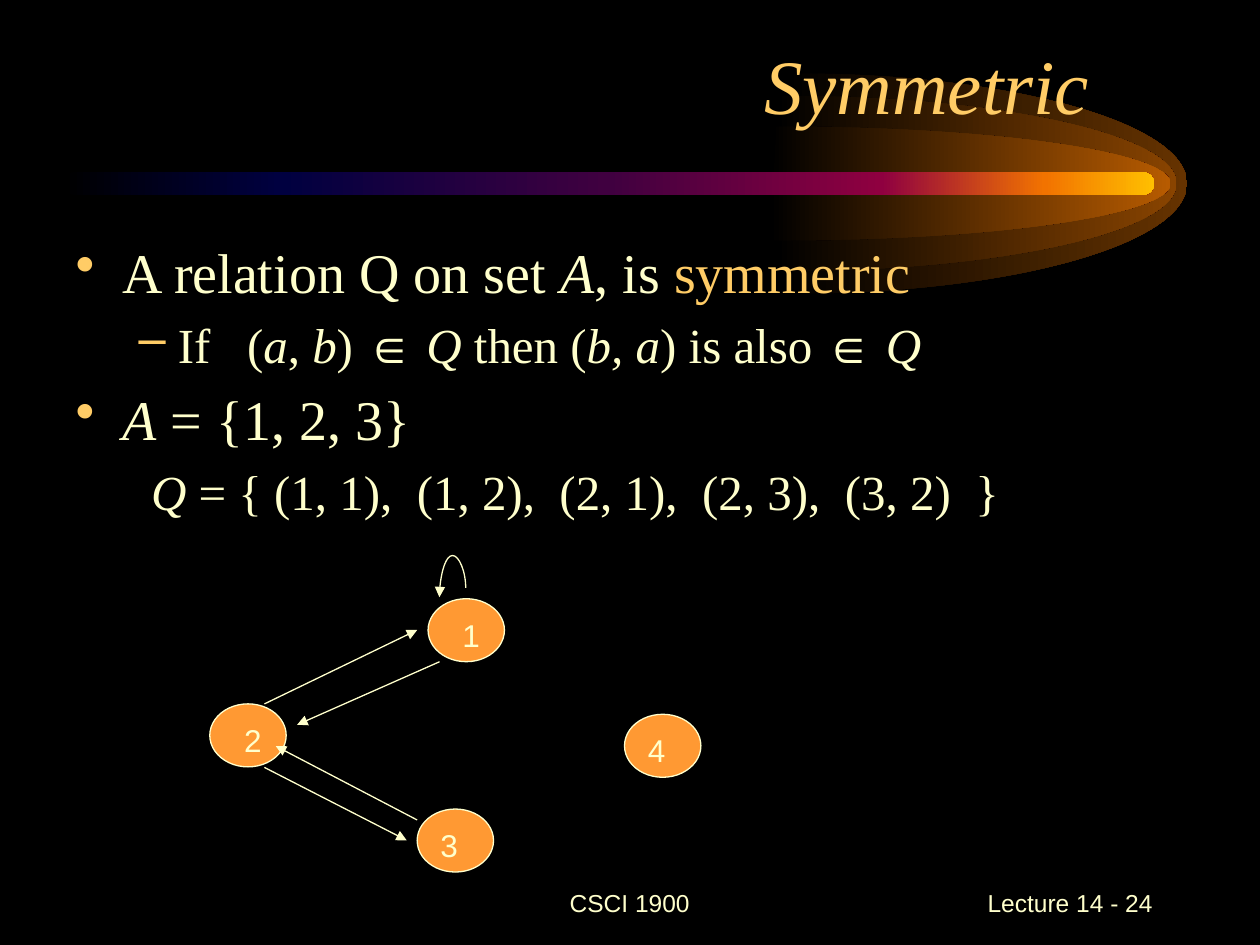
from lxml import etree
from pptx import Presentation
from pptx import util as u
from pptx.dml.color import RGBColor
from pptx.enum import shapes, text
from pptx.oxml import ns

BLACK = RGBColor(0x00, 0x00, 0x00)
CREAM = RGBColor(0xFF, 0xFF, 0xCC)
GOLD = RGBColor(0xFF, 0xCC, 0x66)
ORANGE = RGBColor(0xFF, 0x99, 0x33)
SERIF, SANS = "Times New Roman", "Arial"

# Comet tail: centre x, vertical radius (cm) and end colour of each half ellipse
TAILS = [
    (15.98, 2.22, RGBColor(0x66, 0x33, 0x00)),
    (15.77, 1.77, RGBColor(0x89, 0x44, 0x00)),
    (15.65, 1.15, RGBColor(0xB7, 0x5B, 0x00)),
]
TAIL_RX, TAIL_Y, TAIL_LIP = 7.95, 3.7, 0.13
ARC = 0.55  # handle length of a quarter ellipse, relative to its radius
BAR_STOPS = [
    (0, BLACK),
    (20, RGBColor(0x00, 0x00, 0x40)),
    (50, RGBColor(0x40, 0x00, 0x40)),
    (75, RGBColor(0x8F, 0x00, 0x40)),
    (90, RGBColor(0xF2, 0x73, 0x00)),
    (100, RGBColor(0xFF, 0xBF, 0x00)),
]

# Body lines: runs (*italic*), size, left indent, first-line indent, bullet
BODY = [
    ([("A relation Q on set *A*, is ", CREAM), ("symmetric", GOLD)], 32, 0.95, -0.95, "•"),
    ([("If   (*a*, *b*) ∈ *Q* then (*b, a*) is also ∈ *Q*", CREAM)], 28, 2.06, -0.79, "–"),
    ([("*A* = {1, 2, 3}", CREAM)], 32, 0.95, -0.95, "•"),
    ([("*Q* = { (1, 1),  (1, 2),  (2, 1),  (2, 3),  (3, 2)  }", CREAM)], 28, 2.06, -0.54, None),
]

# Digraph: label, left, top, label offset; then arrows from tail to head (cm)
NODES = [
    ("1", 8.63, 12.07, 0.44),
    ("2", 4.23, 14.19, 0.44),
    ("4", 12.59, 14.4, 0.22),
    ("3", 8.41, 16.31, 0.22),
]
ARROWS = [
    (5.33, 14.19, 8.41, 12.7),
    (8.86, 13.34, 5.99, 14.61),
    (5.33, 15.47, 8.2, 16.94),
    (8.41, 16.53, 5.56, 15.04),
]


def sub(parent, tag, **attrs):
    return etree.SubElement(parent, ns.qn(tag), attrs)


def place(sp, *box):
    sp.left, sp.top, sp.width, sp.height = map(u.Cm, box)


def write(p, content, size=18, font=SANS, color=CREAM, italic=False, align=None):
    """Add text to a paragraph; parts between asterisks are italic."""
    for i, part in enumerate(content.split("*")):
        if part:
            r = p.add_run()
            r.text = part
            r.font.size, r.font.name = u.Pt(size), font
            r.font.italic = italic or i % 2 == 1
            r.font.color.rgb = color
    if align is not None:
        p.alignment = align


def add_text(s, content, *box, anchor=text.MSO_ANCHOR.TOP, **fmt):
    sp = s.shapes.add_textbox(*map(u.Cm, box))
    tf = sp.text_frame
    tf.word_wrap, tf.vertical_anchor = True, anchor
    write(tf.paragraphs[0], content, **fmt)


def set_gradient(sp, stops):
    sp.shadow.inherit = False
    sp.line.fill.background()
    sp.fill.gradient()
    sp.fill.gradient_angle = 0
    gs_list = sp.element.spPr.find(ns.qn("a:gradFill")).find(ns.qn("a:gsLst"))
    for gs in list(gs_list):
        gs_list.remove(gs)
    for pos, color in stops:
        gs = sub(gs_list, "a:gs", pos=str(pos * 1000))
        sub(gs, "a:srgbClr", val=str(color))


def add_tail(s, cx, ry, color):
    """Half ellipse of two quarter curves, open to the left."""
    outline = [(0, -1), (ARC, -1), (1, -ARC), (1, 0), (1, ARC), (ARC, 1), (0, 1)]
    points = [(u.Cm(cx + TAIL_RX * x), u.Cm(TAIL_Y + ry * y)) for x, y in outline]
    points.append((u.Cm(cx - TAIL_LIP), u.Cm(TAIL_Y + ry)))
    fb = s.shapes.build_freeform(*points[0])
    fb.add_line_segments(points[1:], close=True)
    sp = fb.convert_to_shape()
    # Turn each three line ends of the quarters into one Bezier segment
    lines = list(sp.element.iter(ns.qn("a:lnTo")))
    for trio in (lines[0:3], lines[3:6]):
        curve = etree.Element(ns.qn("a:cubicBezTo"))
        trio[0].addprevious(curve)
        for line in trio:
            curve.append(line[0])
            line.getparent().remove(line)
    set_gradient(sp, [(0, BLACK), (100, color)])


def add_bar(s):
    sp = s.shapes.add_shape(shapes.MSO_SHAPE.ROUNDED_RECTANGLE,
                            *map(u.Cm, (1.27, 3.47, 22.0, 0.46)))
    sp.adjustments[0] = 0.5
    set_gradient(sp, BAR_STOPS)


def add_title(sp):
    place(sp, 1.69, 0.62, 21.59, 2.12)
    tf = sp.text_frame
    tf.auto_size, tf.vertical_anchor = text.MSO_AUTO_SIZE.NONE, text.MSO_ANCHOR.BOTTOM
    tf.margin_right = u.Cm(1.32)
    write(tf.paragraphs[0], "Symmetric", size=44, font=SERIF, color=GOLD,
          italic=True, align=text.PP_ALIGN.RIGHT)


def add_body(sp):
    place(sp, 1.27, 4.66, 22.86, 12.65)
    tf = sp.text_frame
    tf.auto_size = text.MSO_AUTO_SIZE.NONE
    for i, (runs, size, left, first, bullet) in enumerate(BODY):
        p = tf.add_paragraph() if i else tf.paragraphs[0]
        p.level = i % 2
        for content, color in runs:
            write(p, content, size=size, font=SERIF, color=color)
        pPr = p._p.get_or_add_pPr()
        pPr.set("marL", str(u.Cm(left)))
        pPr.set("indent", str(u.Cm(first)))
        if bullet:
            sub(sub(pPr, "a:buClr"), "a:srgbClr", val=str(GOLD))
            sub(pPr, "a:buFontTx")
            sub(pPr, "a:buChar", char=bullet)
        else:
            sub(pPr, "a:buNone")


def add_node(s, label, left, top, dx):
    sp = s.shapes.add_shape(shapes.MSO_SHAPE.OVAL, *map(u.Cm, (left, top, 1.54, 1.27)))
    sp.shadow.inherit = False
    sp.fill.solid()
    sp.fill.fore_color.rgb = ORANGE
    sp.line.color.rgb, sp.line.width = CREAM, u.Pt(0.75)
    add_text(s, label, left + dx, top + 0.22, 0.9, 1.02)


def add_arrow(s, *ends, kind=shapes.MSO_CONNECTOR.STRAIGHT):
    cn = s.shapes.add_connector(kind, *map(u.Cm, ends))
    cn.line.color.rgb, cn.line.width = CREAM, u.Pt(0.75)
    sub(cn.line._get_or_add_ln(), "a:tailEnd", type="triangle")
    sub(cn.element.spPr, "a:effectLst")
    return cn


def add_loop(s):
    """Curved arrow above node 1, turned a quarter to the left."""
    cn = add_arrow(s, 9.22, 12.21, 9.03, 11.68, kind=shapes.MSO_CONNECTOR.CURVE)
    spPr = cn.element.spPr
    spPr.find(ns.qn("a:xfrm")).set("rot", str(270 * 60000))
    av = spPr.find(ns.qn("a:prstGeom")).find(ns.qn("a:avLst"))
    sub(av, "a:gd", name="adj1", fmla="val -343000")


def main():
    prs = Presentation()
    prs.slide_width, prs.slide_height = u.Cm(25.4), u.Cm(19.05)
    s = prs.slides.add_slide(prs.slide_layouts[1])
    s.background.fill.solid()
    s.background.fill.fore_color.rgb = BLACK

    # Comet decoration
    for tail in TAILS:
        add_tail(s, *tail)
    add_bar(s)

    # Footer
    middle = text.MSO_ANCHOR.MIDDLE
    add_text(s, "CSCI 1900", 8.67, 17.57, 8.05, 1.27, anchor=middle,
             size=14, align=text.PP_ALIGN.CENTER)
    add_text(s, "Lecture 14 - 24", 18.21, 17.57, 5.28, 1.27, anchor=middle,
             size=14, align=text.PP_ALIGN.RIGHT)

    # Title and list, brought in front of the decoration
    title, body = s.placeholders
    for sp in (title, body):
        sp.element.getparent().append(sp.element)
    add_title(title)
    add_body(body)

    # Digraph
    for node in NODES:
        add_node(s, *node)
    for arrow in ARROWS:
        add_arrow(s, *arrow)
    add_loop(s)

    prs.save("out.pptx")


if __name__ == "__main__":
    main()
